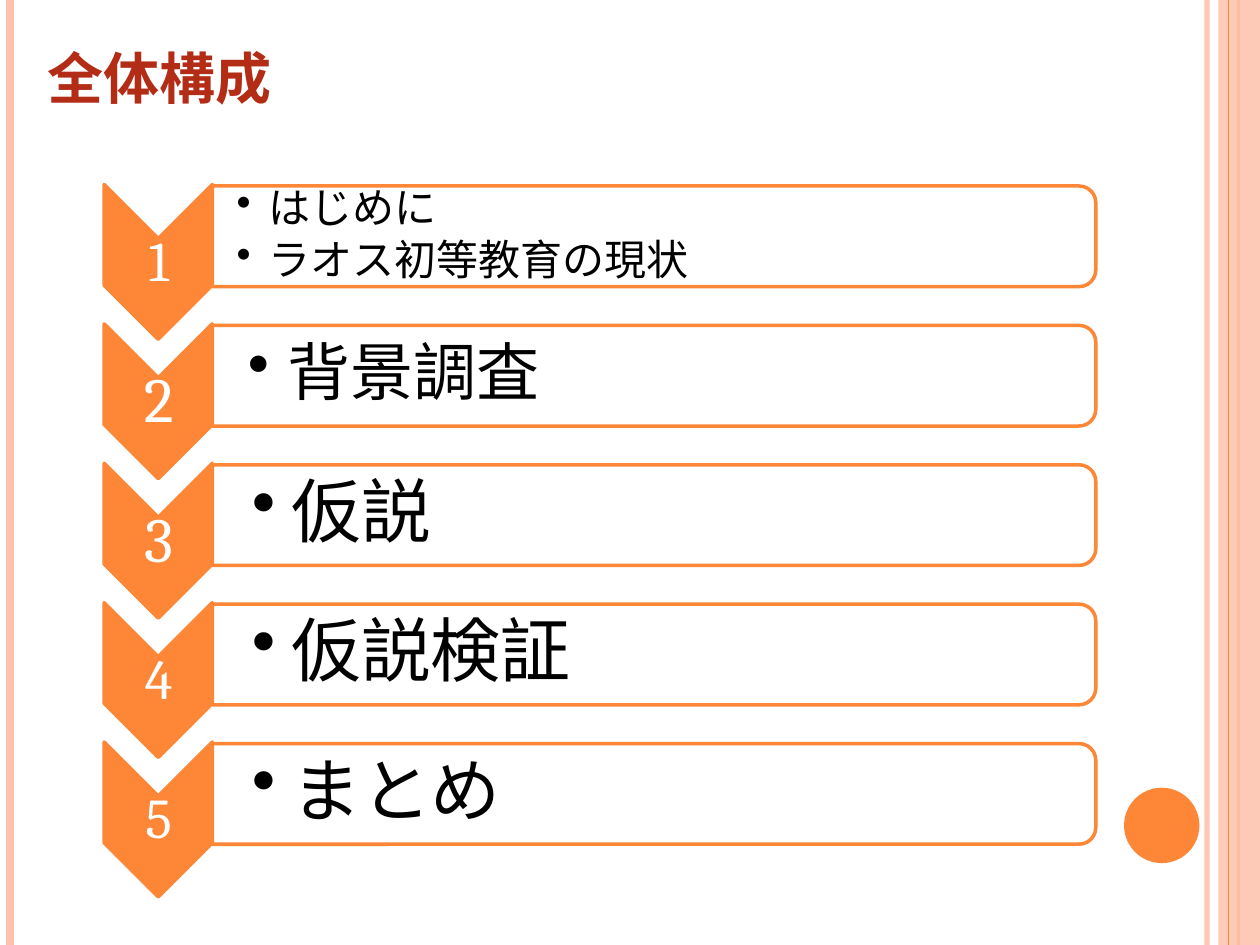
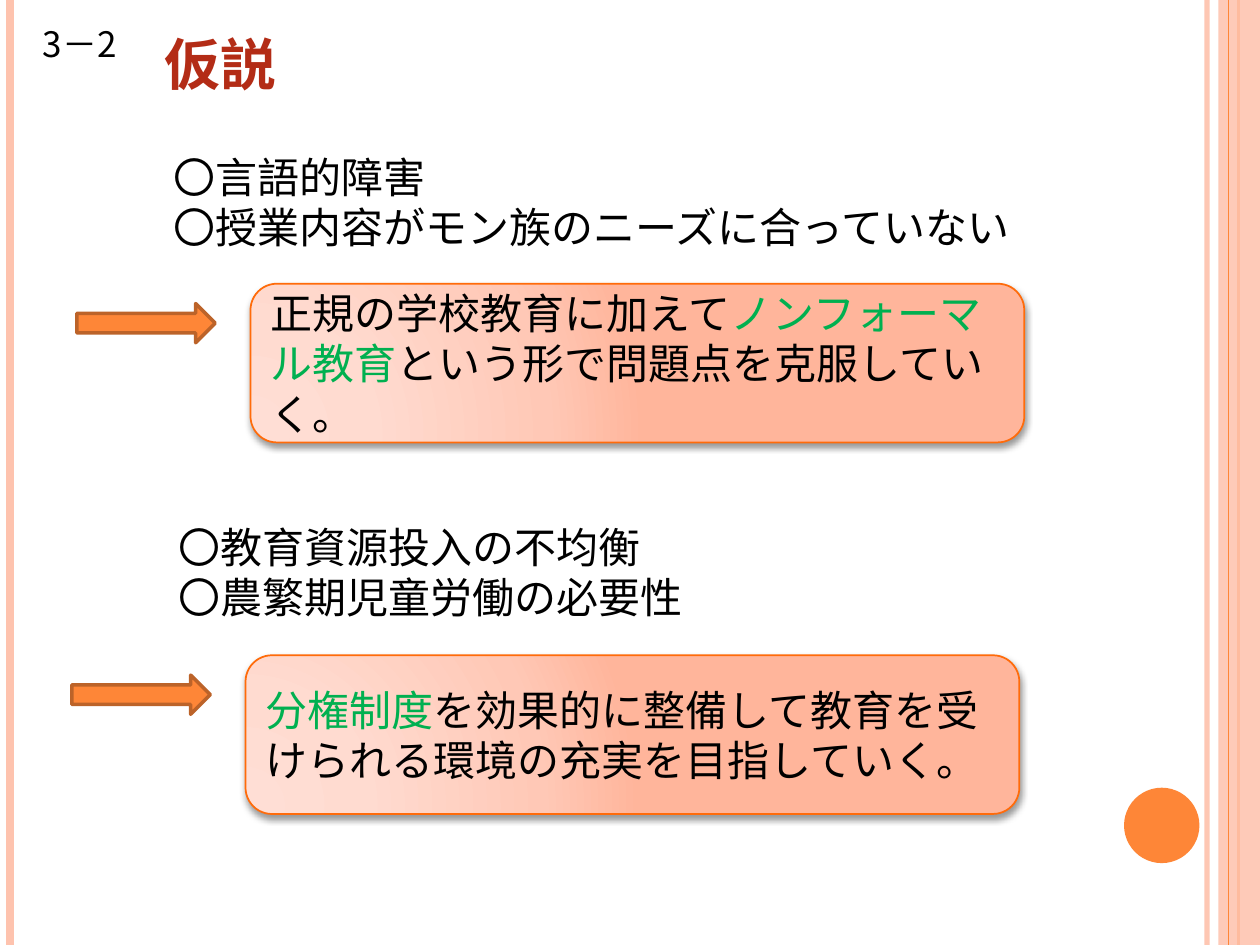
from lxml import etree
from pptx import Presentation
from pptx import util as u
from pptx.dml.color import RGBColor
from pptx.enum import shapes, text
from pptx.oxml import parse_xml
from pptx.oxml.ns import nsdecls, qn

Cm, Pt = u.Cm, u.Pt
KIND = shapes.MSO_SHAPE
MID = text.MSO_ANCHOR.MIDDLE
SANS, SERIF = "Noto Sans CJK JP", "Cambria"
HUE = {
    "main": "FE8637", "pale": "FEC3AE", "edge": "BC6329", "rim": "FF6B0A",
    "title": "B32C16", "ink": "000000", "white": "FFFFFF", "green": "00B050",
}
GLOW = [(0, "FFDED5"), (30, "FFDBD0"), (75, "FFC8B6"), (100, "FFB59B")]
WIDE, HIGH = 25.4, 19.05


def rgb(key):
    return RGBColor.from_string(HUE[key])


def fade(shape, share):
    """Set the opacity of a shape's first colour, in percent."""
    tone = shape._element.spPr.find(".//" + qn("a:srgbClr"))
    etree.SubElement(tone, qn("a:alpha")).set("val", str(share * 1000))


# Basic elements
def rule(slide, x, width, hue):
    line = slide.shapes.add_connector(
        shapes.MSO_CONNECTOR.STRAIGHT, Cm(x), 0, Cm(x), Cm(HIGH))
    line.line.color.rgb = rgb(hue)
    line.line.width = Pt(width)
    etree.SubElement(line._element.spPr, qn("a:effectLst"))
    return line


def form(slide, kind, box, fill, edge=None, width=2):
    shape = slide.shapes.add_shape(kind, *map(Cm, box))
    shape.shadow.inherit = False
    shape.fill.solid()
    shape.fill.fore_color.rgb = rgb(fill)
    if edge:
        shape.line.color.rgb = rgb(edge)
        shape.line.width = Pt(width)
    else:
        shape.line.fill.background()
    return shape


def turned(slide, kind, box, fill):
    """Add a shape that fills the box after a quarter turn."""
    x, y, w, h = box
    shift = (w - h) / 2
    shape = form(slide, kind, (x + shift, y - shift, h, w), fill, "main")
    shape.rotation = 90
    return shape


def style(para, size, hue="ink", name=SANS, bold=False):
    font = para.font
    font.size, font.bold, font.name = Pt(size), bold, name
    font.color.rgb = rgb(hue)
    base = para._p.pPr.find(qn("a:defRPr"))
    etree.SubElement(base, qn("a:ea")).set("typeface", name)


def write(frame, lines, size, hue="ink", name=SANS, bold=False):
    """Fill a text frame with one paragraph per line and return them."""
    frame.word_wrap = True
    frame.text = "\n".join(lines)
    for para in frame.paragraphs:
        para.alignment = text.PP_ALIGN.LEFT
        style(para, size, hue, name, bold)
    return frame.paragraphs


def label(slide, box, lines, size, hue="ink", name=SANS):
    frame = slide.shapes.add_textbox(*map(Cm, box)).text_frame
    return frame, write(frame, lines, size, hue, name)


def inset(frame, left, rest):
    frame.vertical_anchor = MID
    frame.margin_left = Cm(left)
    frame.margin_top = frame.margin_right = frame.margin_bottom = Cm(rest)


def bullet(para, depth):
    prop = para._p.pPr
    prop.set("marL", str(Cm(depth)))
    prop.set("indent", str(-Cm(depth)))
    mark = etree.Element(qn("a:buChar"), char="•")
    prop.find(qn("a:defRPr")).addprevious(mark)


# Shared page: side bands, dot and title
def page(deck, title, box):
    slide = deck.slides.add_slide(deck.slide_layouts[5])
    fade(rule(slide, 24.33, 3, "pale"), 93)
    rule(slide, 0.2, 4.5, "pale")
    rule(slide, 24.97, 1.5, "main")
    fade(form(slide, KIND.RECTANGLE, (24.56, 0, WIDE - 24.56, HIGH), "pale"), 87)
    rule(slide, 24.77, 0.75, "main")
    form(slide, KIND.OVAL, (22.66, 15.88, 1.52, 1.52), "main")

    head = slide.shapes.title
    head.left, head.top, head.width, head.height = map(Cm, box)
    frame = head.text_frame
    frame.auto_size = text.MSO_AUTO_SIZE.NONE
    frame.vertical_anchor = text.MSO_ANCHOR.TOP
    write(frame, [title], 32, "title", bold=True)
    return slide


# Numbered step: chevron and bar
def step(slide, num, lines, sizes, left, depth):
    top = 3.72 + (num - 1) * 2.81
    big, size = sizes
    turned(slide, KIND.CHEVRON, (2.1, top, 2.18, 3.12), "main")
    frame, paras = label(slide, (2.11, top + 1.11, 2.18, 0.94), [str(num)],
                         big, "white", SERIF)
    inset(frame, 0.06, 0.06)
    paras[0].alignment = text.PP_ALIGN.CENTER
    paras[0].line_spacing = 0.9
    paras[0].space_after = Pt(big * 0.35)

    bar = turned(slide, KIND.ROUND_2_SAME_RECTANGLE,
                 (4.28, top + 0.03, 17.81, 2.03), "white")
    fade(bar, 90)
    frame, paras = label(slide, (4.29, top + 0.12, 17.7, 1.83), lines, size)
    inset(frame, left, 0.06)
    for para in paras:
        bullet(para, depth)
        para.line_spacing = 0.9
        para.space_after = Pt(size * 0.15)


# Glowing box with a soft shadow
def panel(slide, box, parts):
    shape = form(slide, KIND.ROUNDED_RECTANGLE, box, "pale", "rim", 1)
    stops = "".join(
        f'<a:gs pos="{at * 1000}"><a:srgbClr val="{tone}"/></a:gs>'
        for at, tone in GLOW)
    prop = shape._element.spPr
    prop.replace(prop.find(qn("a:solidFill")), parse_xml(
        f'<a:gradFill {nsdecls("a")} rotWithShape="1"><a:gsLst>{stops}</a:gsLst>'
        '<a:path path="circle"><a:fillToRect l="5000" t="100000" r="120000"'
        ' b="10000"/></a:path></a:gradFill>'))
    prop.find(qn("a:effectLst")).append(parse_xml(
        f'<a:outerShdw {nsdecls("a")} blurRad="{Pt(4)}" dist="{Pt(2)}"'
        ' dir="5400000" rotWithShape="0"><a:srgbClr val="000000">'
        '<a:alpha val="40000"/></a:srgbClr></a:outerShdw>'))

    frame = shape.text_frame
    frame.vertical_anchor = MID
    para = write(frame, [""], 24)[0]
    for words, hue in parts:
        run = para.add_run()
        run.text = words
        run.font.color.rgb = rgb(hue)


# Problems, arrow and the answer to them
def claim(slide, x, y, note, lines, parts):
    panel(slide, (x, y, 15.6, 3.2), parts)
    label(slide, (*note, 2.31), lines, 24)
    form(slide, KIND.RIGHT_ARROW, (x - 3.5, y + 0.4, 2.79, 0.79), "main", "edge")


def main():
    deck = Presentation()
    deck.slide_width, deck.slide_height = Cm(WIDE), Cm(HIGH)

    # Outline
    slide = page(deck, "全体構成", (0.71, 0.74, 10.39, 1.63))
    steps = [
        (["はじめに", "ラオス初等教育の現状"], (32, 24), 0.48, 0.64),
        (["背景調査"], (36, 36), 0.71, 0.79),
        (["仮説"], (36, 40), 0.79, 0.79),
        (["仮説検証"], (32, 40), 0.79, 0.79),
        (["まとめ"], (32, 40), 0.79, 0.79),
    ]
    for num, item in enumerate(steps, 1):
        step(slide, num, *item)

    # Hypotheses
    slide = page(deck, "仮説", (3.07, 0.46, 5.69, 1.63))
    label(slide, (0.61, 0.33, 3.2, 1.12), ["3－2"], 20)
    claim(slide, 5.05, 5.72, (3.25, 2.92, 18.8),
          ["〇言語的障害", "〇授業内容がモン族のニーズに合っていない"],
          [("正規の学校教育に加えて", "ink"), ("ノンフォーマル教育", "green"),
           ("という形で問題点を克服していく。", "ink")])
    claim(slide, 4.95, 13.21, (3.35, 10.39, 16.41),
          ["〇教育資源投入の不均衡", "〇農繁期児童労働の必要性"],
          [("分権制度", "green"),
           ("を効果的に整備して教育を受けられる環境の充実を目指していく。", "ink")])

    deck.save("out.pptx")


if __name__ == "__main__":
    main()
